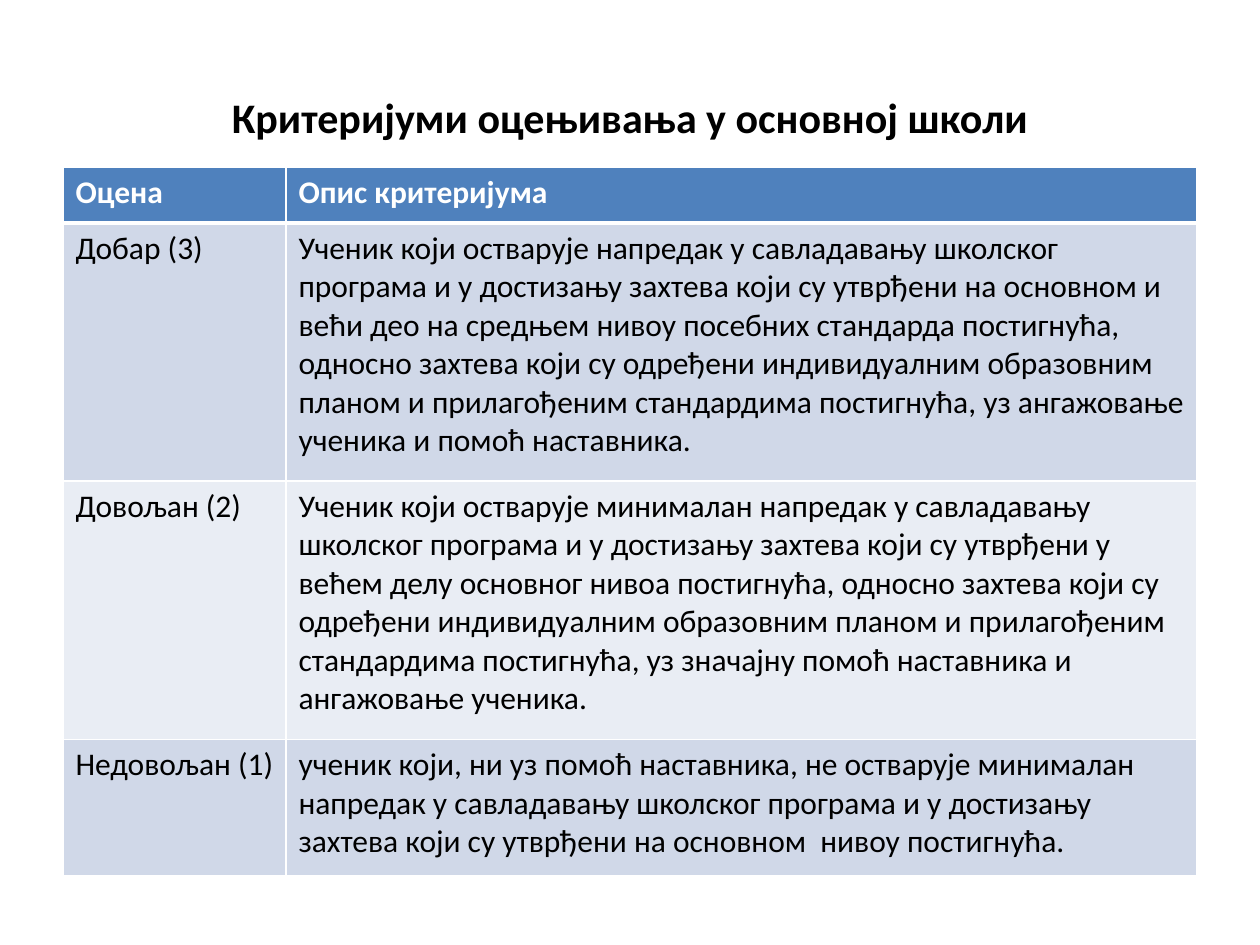
from lxml import etree
from pptx import Presentation
from pptx.dml.color import RGBColor
from pptx.enum.text import MSO_ANCHOR, PP_ALIGN
from pptx.oxml.ns import qn
from pptx.util import Inches, Pt

BLACK = RGBColor(0x00, 0x00, 0x00)
WHITE = RGBColor(0xFF, 0xFF, 0xFF)
HEADER = RGBColor(0x4F, 0x81, 0xBD)
BANDS = [RGBColor(0xE9, 0xED, 0xF4), RGBColor(0xD0, 0xD8, 0xE8)]

COL_WIDTHS = [1.77, 7.23]
ROW_HEIGHTS = [0.44, 2.05, 2.05, 1.08]
ROWS = [
    ("Оцена", "Опис критеријума"),
    ("Добар (3)",
     "Ученик који остварује напредак у савладавању школског програма и у "
     "достизању захтева који су утврђени на основном и већи део на средњем "
     "нивоу посебних стандарда постигнућа, односно захтева који су одређени "
     "индивидуалним образовним планом и прилагођеним стандардима постигнућа, "
     "уз ангажовање ученика и помоћ наставника."),
    ("Довољан (2)",
     "Ученик који остварује минималан напредак у савладавању школског програма "
     "и у достизању захтева који су утврђени у већем делу основног нивоа "
     "постигнућа, односно захтева који су одређени индивидуалним образовним "
     "планом и прилагођеним стандардима постигнућа, уз значајну помоћ "
     "наставника и ангажовање ученика."),
    ("Недовољан (1)",
     "ученик који, ни уз помоћ наставника, не остварује минималан напредак у "
     "савладавању школског програма и у достизању захтева који су утврђени на "
     "основном  нивоу постигнућа."),
]


def add_run(p, text, size, color, bold):
    r = p.add_run()
    r.text = text
    r.font.name = "Calibri"
    r.font.size = Pt(size)
    r.font.bold = bold
    r.font.color.rgb = color


def add_border(cell, side, width):
    ln = etree.SubElement(cell._tc.get_or_add_tcPr(), qn(f"a:ln{side}"), w=str(Pt(width)))
    fill = etree.SubElement(ln, qn("a:solidFill"))
    etree.SubElement(fill, qn("a:srgbClr"), val=str(WHITE))


prs = Presentation()
prs.slide_width, prs.slide_height = Inches(10), Inches(7.5)
s = prs.slides.add_slide(prs.slide_layouts[6])

# Title
tf = s.shapes.add_textbox(Inches(0.5), Inches(0.3), Inches(9), Inches(1.25)).text_frame
tf.word_wrap = True
tf.vertical_anchor = MSO_ANCHOR.MIDDLE
p = tf.paragraphs[0]
p.alignment = PP_ALIGN.CENTER
add_run(p, "Критеријуми оцењивања у основној школи", 24, BLACK, True)

# Criteria table
table = s.shapes.add_table(len(ROWS), len(COL_WIDTHS), Inches(0.5), Inches(1.33),
                           Inches(sum(COL_WIDTHS)), Inches(sum(ROW_HEIGHTS))).table
for col, width in zip(table.columns, COL_WIDTHS):
    col.width = Inches(width)
for row, height in zip(table.rows, ROW_HEIGHTS):
    row.height = Inches(height)

for i, texts in enumerate(ROWS):
    is_header = i == 0
    for j, text in enumerate(texts):
        cell = table.cell(i, j)
        # The line under the header is thicker than the rest
        for side in "LRTB":
            thick = (i, side) in [(0, "B"), (1, "T")]
            add_border(cell, side, 3 if thick else 1)
        cell.fill.solid()
        cell.fill.fore_color.rgb = HEADER if is_header else BANDS[i % 2]
        add_run(cell.text_frame.paragraphs[0], text, 18,
                WHITE if is_header else BLACK, is_header)

prs.save("out.pptx")
